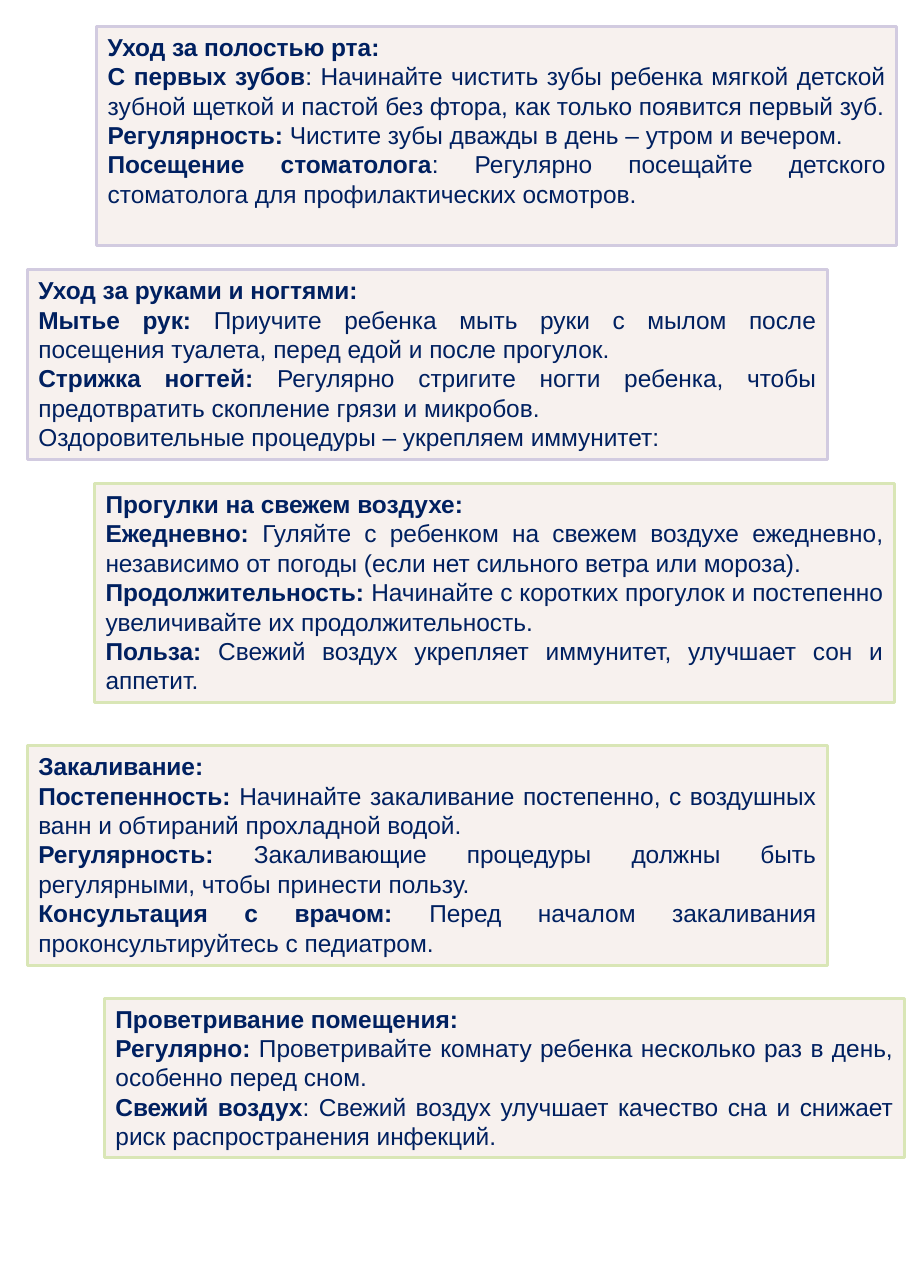
from pptx import Presentation
from pptx.dml.color import RGBColor
from pptx.enum.shapes import MSO_SHAPE as Shape
from pptx.enum.text import MSO_ANCHOR as Anchor, MSO_AUTO_SIZE as AutoSize, PP_ALIGN as Align
from pptx.util import Inches, Pt


def color(value):
    return RGBColor.from_string(value)


class Leaflet:
    font = "Arial"
    size = 16
    ink = "002060"
    paper = "F7F1EE"
    card_width = 7.26

    def __init__(self, page):
        self.page = page

    def span(self, para, text, bold):
        span = para.add_run()
        span.text = text
        span.font.name = self.font
        span.font.size = Pt(self.size)
        span.font.bold = bold
        span.font.color.rgb = color(self.ink)

    def card(self, left, top, height, border, heading, advice):
        box = self.page.shapes.add_shape(
            Shape.RECTANGLE, Inches(left), Inches(top),
            Inches(self.card_width), Inches(height))
        box.shadow.inherit = False
        box.fill.solid()
        box.fill.fore_color.rgb = color(self.paper)
        box.line.color.rgb = color(border)
        box.line.width = Pt(2)
        frame = box.text_frame
        frame.word_wrap = True
        frame.auto_size = AutoSize.NONE
        frame.vertical_anchor = Anchor.TOP
        for index, (label, text) in enumerate([(heading, ""), *advice]):
            para = frame.paragraphs[0] if index == 0 else frame.add_paragraph()
            para.alignment = Align.JUSTIFY
            if label:
                self.span(para, label, True)
            if text:
                self.span(para, text, False)


LILAC = "D2CBE0"
GREEN = "D9E6B6"

CARDS = [
    (0.88, 0.24, 1.99, LILAC, "Уход за полостью рта:", [
        ("С первых зубов", ": Начинайте чистить зубы ребенка мягкой детской зубной щеткой "
         "и пастой без фтора, как только появится первый зуб."),
        ("Регулярность: ", "Чистите зубы дважды в день – утром и вечером."),
        ("Посещение стоматолога", ": Регулярно посещайте детского стоматолога "
         "для профилактических осмотров."),
    ]),
    (0.25, 2.45, 1.72, LILAC, "Уход за руками и ногтями:", [
        ("Мытье рук: ", "Приучите ребенка мыть руки с мылом после посещения туалета, "
         "перед едой и после прогулок."),
        ("Стрижка ногтей:", " Регулярно стригите ногти ребенка, чтобы предотвратить "
         "скопление грязи и микробов."),
        ("", "Оздоровительные процедуры – укрепляем иммунитет:"),
    ]),
    (0.86, 4.39, 1.99, GREEN, "Прогулки на свежем воздухе:", [
        ("Ежедневно: ", "Гуляйте с ребенком на свежем воздухе ежедневно, независимо "
         "от погоды (если нет сильного ветра или мороза)."),
        ("Продолжительность: ", "Начинайте с коротких прогулок и постепенно увеличивайте "
         "их продолжительность."),
        ("Польза:", " Свежий воздух укрепляет иммунитет, улучшает сон и аппетит."),
    ]),
    (0.25, 6.77, 1.99, GREEN, "Закаливание:", [
        ("Постепенность:", " Начинайте закаливание постепенно, с воздушных ванн "
         "и обтираний прохладной водой."),
        ("Регулярность:", " Закаливающие процедуры должны быть регулярными, "
         "чтобы принести пользу."),
        ("Консультация с врачом: ", "Перед началом закаливания "
         "проконсультируйтесь с педиатром."),
    ]),
    (0.95, 9.06, 1.45, GREEN, "Проветривание помещения:", [
        ("Регулярно:", " Проветривайте комнату ребенка несколько раз в день, "
         "особенно перед сном."),
        ("Свежий воздух", ": Свежий воздух улучшает качество сна и снижает риск "
         "распространения инфекций."),
    ]),
]


def main():
    deck = Presentation()
    deck.slide_width = Inches(8.27)
    deck.slide_height = Inches(11.69)
    leaflet = Leaflet(deck.slides.add_slide(deck.slide_layouts[6]))
    for card in CARDS:
        leaflet.card(*card)
    deck.save("out.pptx")


if __name__ == "__main__":
    main()
